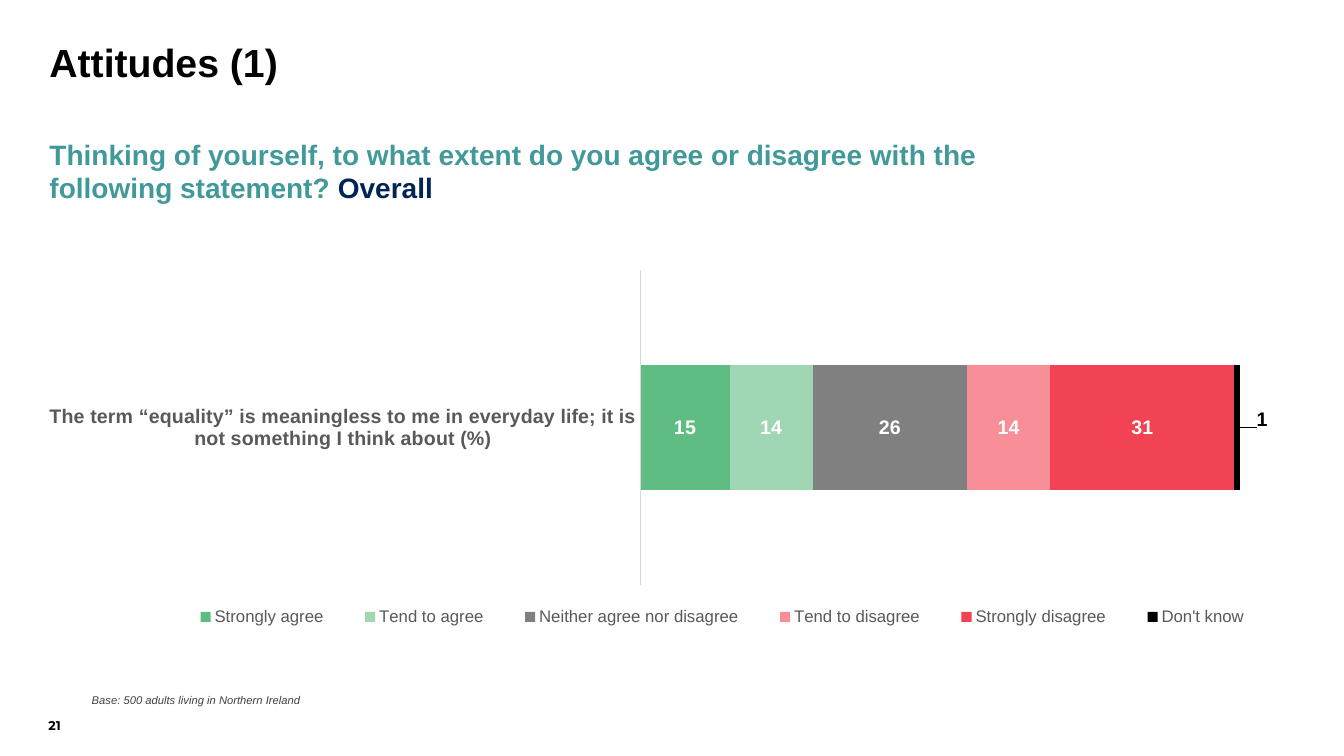
import pptx
import pptx.chart.data
import pptx.dml.color
import pptx.enum.chart
import pptx.enum.text
import pptx.oxml
import pptx.oxml.ns
import pptx.util
from pptx.util import Inches

COLOURS = {
    "black": "000000", "white": "FFFFFF", "teal": "419999", "navy": "002554",
    "label": "595959", "note": "404040", "axis": "D9D9D9",
}
TITLE = "Attitudes (1)"
QUESTION = [
    ("Thinking of yourself, to what extent do you agree or disagree with the "
     "following statement? ", "teal"),
    ("Overall", "navy"),
]
STATEMENT = ("The term “equality” is meaningless to me in everyday life; "
             "it is not something I think about (%)")
ANSWERS = [  # answer, percentage, bar colour
    ("Strongly agree", 15, "5FBD83"),
    ("Tend to agree", 14, "9FD7B5"),
    ("Neither agree nor disagree", 26, "808080"),
    ("Tend to disagree", 14, "F78E98"),
    ("Strongly disagree", 31, "F14354"),
    ("Don't know", 1, "000000"),
]
BASE_NOTE = "Base: 500 adults living in Northern Ireland"
PAGE_NUMBER = "21"

PLOT_AREA = {"layoutTarget": "inner", "xMode": "edge", "yMode": "edge",
             "x": 0.474, "y": 0.04, "w": 0.484, "h": 0.826}
LEGEND_AREA = {"xMode": "edge", "yMode": "edge",
               "x": 0.09, "y": 0.91, "w": 0.9, "h": 0.08}
LAST_LABEL_SHIFT = {"x": 0.02, "y": -0.02}


def rgb(value):
    return pptx.dml.color.RGBColor.from_string(COLOURS.get(value, value))


def style(font, size, colour, bold=False, italic=False, face="Arial"):
    font.name, font.size = face, pptx.util.Pt(size)
    font.bold, font.italic = bold, italic
    font.color.rgb = rgb(colour)


def place(shape, left, top, width, height, anchor="TOP"):
    shape.left, shape.top = Inches(left), Inches(top)
    shape.width, shape.height = Inches(width), Inches(height)
    frame = shape.text_frame
    frame.margin_left = frame.margin_right = 0
    frame.margin_top = frame.margin_bottom = 0
    frame.word_wrap = True
    frame.auto_size = pptx.enum.text.MSO_AUTO_SIZE.NONE
    frame.vertical_anchor = getattr(pptx.enum.text.MSO_ANCHOR, anchor)
    paragraph = frame.paragraphs[0]
    paragraph.alignment = pptx.enum.text.PP_ALIGN.LEFT
    return paragraph


def add_text(*box, anchor="TOP"):
    return place(slide.shapes.add_textbox(0, 0, 0, 0), *box, anchor=anchor)


def manual_layout(settings):
    items = "".join(f'<c:{key} val="{value}"/>' for key, value in settings.items())
    return pptx.oxml.parse_xml(
        f'<c:layout {pptx.oxml.ns.nsdecls("c")}>'
        f"<c:manualLayout>{items}</c:manualLayout></c:layout>")


def set_layout(parent, settings, index):
    for old in parent.findall(pptx.oxml.ns.qn("c:layout")):
        parent.remove(old)
    parent.insert(index, manual_layout(settings))


deck = pptx.Presentation()
deck.slide_width, deck.slide_height = Inches(13.33), Inches(7.5)
slide = deck.slides.add_slide(deck.slide_layouts[5])

# Title and question
title = place(slide.shapes.title, 0.49, 0.43, 10.22, 0.85)
title.text = TITLE
title.line_spacing = 0.9
style(title.runs[0].font, 28, "black", bold=True)

question = add_text(0.49, 1.36, 10.22, 0.67)
for words, colour in QUESTION:
    run = question.add_run()
    run.text = words
    style(run.font, 20, colour, bold=True)

# Stacked bar of answers
answer_data = pptx.chart.data.CategoryChartData(number_format="0")
answer_data.categories = [STATEMENT]
for answer, percent, _ in ANSWERS:
    answer_data.add_series(answer, [percent])
chart = slide.shapes.add_chart(
    pptx.enum.chart.XL_CHART_TYPE.BAR_STACKED_100, Inches(0.49), Inches(2.53),
    Inches(12.33), Inches(3.78), answer_data).chart
style(chart.font, 10, "black")
chart.has_title = False

plot = chart.plots[0]
plot.gap_width, plot.overlap = 150, 100
plot.vary_by_categories = False
for series, (_, _, colour) in zip(plot.series, ANSWERS):
    series.format.fill.solid()
    series.format.fill.fore_color.rgb = rgb(colour)
    labels = series.data_labels
    labels.show_value = True
    labels.number_format, labels.number_format_is_linked = "0", False
    style(labels.font, 14, "white", bold=True)

# The last label stands to the right of its thin bar
last_label = plot.series[len(ANSWERS) - 1].points[0].data_label
style(last_label.font, 14, "black", bold=True)
last_element = plot.series[len(ANSWERS) - 1].data_labels._element
set_layout(last_element.find(pptx.oxml.ns.qn("c:dLbl")), LAST_LABEL_SHIFT, 1)

# Axes and legend
statement_axis = chart.category_axis
statement_axis.major_tick_mark = pptx.enum.chart.XL_TICK_MARK.NONE
statement_axis.format.line.color.rgb = rgb("axis")
statement_axis.format.line.width = pptx.util.Pt(0.75)
style(statement_axis.tick_labels.font, 14, "label", bold=True)
chart.value_axis.has_major_gridlines = False
chart.value_axis.visible = False

chart.has_legend = True
chart.legend.position = pptx.enum.chart.XL_LEGEND_POSITION.BOTTOM
chart.legend.include_in_layout = False
style(chart.legend.font, 12, "label")
set_layout(chart.legend._element, LEGEND_AREA, 1)
set_layout(chart._chartSpace.chart.plotArea, PLOT_AREA, 0)

# Base note and page number
base_note = add_text(0.91, 6.87, 12.33, 0.14, anchor="BOTTOM")
base_note.text = BASE_NOTE
base_note.line_spacing = 1.1
style(base_note.runs[0].font, 8, "note", italic=True)

page_number = add_text(0.48, 6.87, 0.33, 0.4, anchor="BOTTOM")
page_number.text = PAGE_NUMBER
style(page_number.runs[0].font, 9, "black", bold=True, face="Montserrat")

deck.save("out.pptx")
